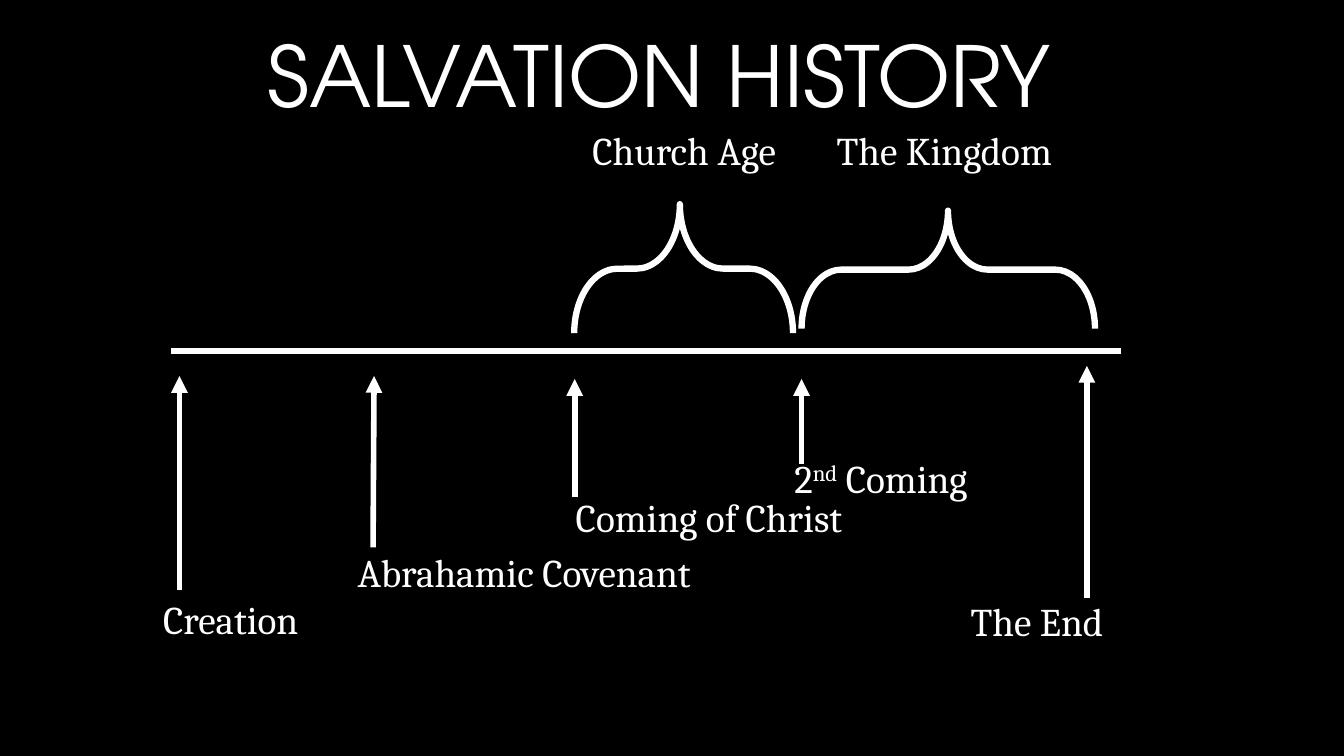
from lxml.etree import SubElement
from pptx import Presentation
from pptx.dml.color import RGBColor
from pptx.enum.shapes import MSO_CONNECTOR as Connector, MSO_SHAPE as Shape
from pptx.enum.text import MSO_ANCHOR as Anchor, PP_ALIGN as Align
from pptx.oxml.ns import qn
from pptx.util import Inches, Pt

BLACK = RGBColor(0x00, 0x00, 0x00)
WHITE = RGBColor(0xFF, 0xFF, 0xFF)
TITLE_FONT, LABEL_FONT = "TeX Gyre Adventor", "Cambria"

deck = Presentation()
deck.slide_width, deck.slide_height = Inches(13.33), Inches(7.5)
page = deck.slides.add_slide(deck.slide_layouts[5])
page.background.fill.solid()
page.background.fill.fore_color.rgb = BLACK


def add_run(para, text, font, size):
    run = para.add_run()
    run.text = text
    run.font.name, run.font.size = font, Pt(size)
    run.font.color.rgb = WHITE
    return run


def add_line(start, end, width, arrow=False):
    points = [Inches(value) for value in (*start, *end)]
    line = page.shapes.add_connector(Connector.STRAIGHT, *points)
    line.line.color.rgb, line.line.width = WHITE, Pt(width)
    if arrow:
        SubElement(line.line._get_or_add_ln(), qn("a:tailEnd"), type="triangle")
    SubElement(line._element.spPr, qn("a:effectLst"))


# Title
title = page.shapes.title
title.left, title.top = Inches(1.66), Inches(0.18)
title.width, title.height = Inches(9.75), Inches(1.11)
title.text_frame.vertical_anchor = Anchor.MIDDLE
title_para = title.text_frame.paragraphs[0]
title_para.alignment = Align.CENTER
add_run(title_para, "SALVATION HISTORY", TITLE_FONT, 60)

# Timeline
add_line((1.7, 3.48), (11.12, 3.48), 4.5)

# Arrows from the events up to the timeline: foot, tip
for foot, tip in [
    ((1.78, 5.85), (1.78, 3.73)),
    ((3.7, 5.43), (3.71, 3.73)),
    ((5.7, 4.93), (5.7, 3.76)),
    ((7.95, 4.6), (7.95, 3.76)),
    ((10.78, 5.93), (10.78, 3.63)),
]:
    add_line(foot, tip, 4, arrow=True)

# Braces over the two ages: frame before the quarter turn, position of the point
for frame, point in [
    ((6.14, 1.58, 1.28, 2.17), 0.517),
    ((8.82, 1.22, 1.17, 2.91), 0.501),
]:
    brace = page.shapes.add_shape(Shape.LEFT_BRACE, *map(Inches, frame))
    brace.rotation = 90
    brace.adjustments[0], brace.adjustments[1] = 0.336, point
    brace.fill.background()
    brace.line.color.rgb, brace.line.width = WHITE, Pt(4.5)
    brace.shadow.inherit = False

# Labels: frame, alignment, line spacing, anchor, (text, raised) parts
for frame, alignment, spacing, anchor, parts in [
    ((5.2, 1.26, 3.17, 0.53), Align.CENTER, 0.9, Anchor.TOP, [("Church Age", False)]),
    ((7.53, 1.26, 3.67, 0.53), Align.CENTER, 0.9, Anchor.TOP, [("The Kingdom", False)]),
    ((1.52, 5.85, 1.63, 0.57), Align.LEFT, 1.0, Anchor.MIDDLE, [("Creation", False)]),
    ((3.45, 5.39, 4.17, 0.57), Align.LEFT, 1.0, Anchor.MIDDLE,
     [("Abrahamic Covenant", False)]),
    ((5.12, 4.9, 3.33, 0.53), Align.RIGHT, 0.9, Anchor.TOP,
     [("Coming of Christ", False)]),
    ((7.78, 4.51, 3.33, 0.53), Align.LEFT, 0.9, Anchor.TOP,
     [("2", False), ("nd", True), (" Coming", False)]),
    ((6.12, 5.93, 4.92, 0.53), Align.RIGHT, 0.9, Anchor.TOP, [("The End", False)]),
]:
    box = page.shapes.add_textbox(*map(Inches, frame))
    box.text_frame.word_wrap = True
    box.text_frame.vertical_anchor = anchor
    para = box.text_frame.paragraphs[0]
    para.alignment, para.line_spacing = alignment, spacing
    for text, raised in parts:
        run = add_run(para, text, LABEL_FONT, 28)
        if raised:
            run.font._element.set("baseline", "30000")

deck.save("out.pptx")
